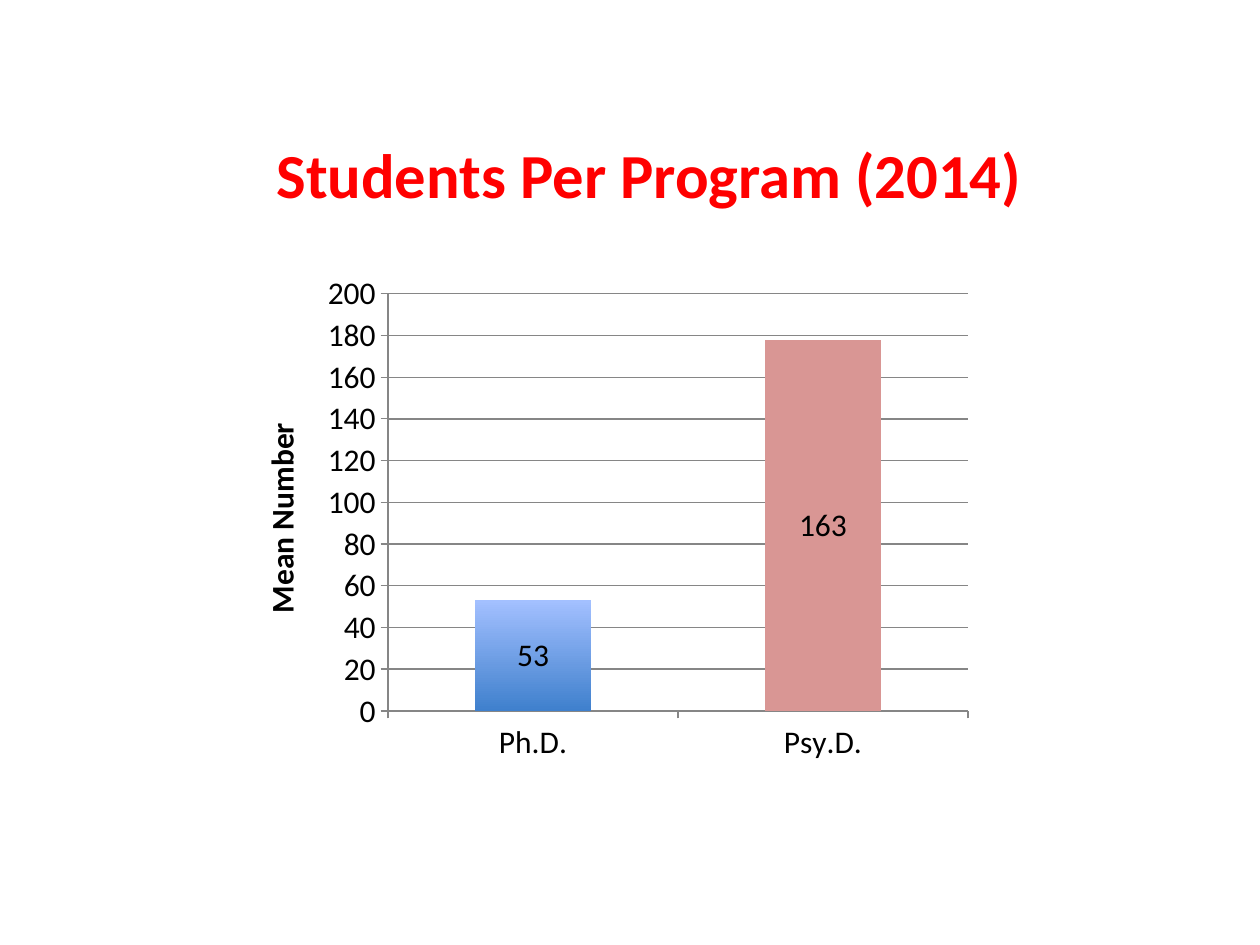
from pptx import Presentation
from pptx.chart.data import CategoryChartData as ChartData
from pptx.dml.color import RGBColor
from pptx.enum.chart import XL_CHART_TYPE as ChartType
from pptx.enum.chart import XL_LABEL_POSITION as LabelPosition
from pptx.enum.chart import XL_TICK_MARK as TickMark
from pptx.enum.text import MSO_ANCHOR as Anchor
from pptx.enum.text import PP_ALIGN as Align
from pptx.oxml import parse_xml
from pptx.oxml.ns import nsdecls
from pptx.util import Inches, Pt

COLORS = {
    "title": "FF0000",
    "text": "000000",
    "line": "868686",
    "blue_top": "A3C0FF",
    "blue_bottom": "3F80CD",
    "pink": "D99694",
}
MEANS = {"Ph.D.": 53, "Psy.D.": 178}
LABELS = ["53", "163"]
PLOT_AREA = {"x": 0.198, "y": 0.158, "w": 0.69, "h": 0.687}


def rgb(name):
    return RGBColor.from_string(COLORS[name])


def format_font(font, size=18, color="text", bold=False):
    font.name = "Calibri"
    font.size = Pt(size)
    font.bold = bold
    font.color.rgb = rgb(color)


def write(frame, text, align=Align.CENTER, **style):
    para = frame.paragraphs[0]
    para.alignment = align
    span = para.add_run()
    span.text = text
    format_font(span.font, **style)


class SlideBuilder:
    def __init__(self, page):
        self.page = page

    def title(self, text, left, top, width, height, **style):
        box = self.page.shapes.title
        box.left, box.top = Inches(left), Inches(top)
        box.width, box.height = Inches(width), Inches(height)
        box.text_frame.word_wrap = True
        box.text_frame.vertical_anchor = Anchor.TOP
        write(box.text_frame, text, **style)

    def column_chart(self, values, labels, left, top, width, height):
        data = ChartData()
        data.categories = list(values)
        data.add_series("Series 1", list(values.values()))
        chart = self.page.shapes.add_chart(
            ChartType.COLUMN_STACKED, Inches(left), Inches(top),
            Inches(width), Inches(height), data).chart
        chart.has_legend = False
        chart.has_title = False
        format_font(chart.font)
        self.axes(chart)
        self.columns(chart.plots[0], labels)
        self.plot_layout(chart)

    def axes(self, chart):
        for axis in (chart.category_axis, chart.value_axis):
            axis.major_tick_mark = TickMark.OUTSIDE
            axis.minor_tick_mark = TickMark.NONE
            axis.format.line.color.rgb = rgb("line")
            format_font(axis.tick_labels.font)
        scale = chart.value_axis
        scale.minimum_scale, scale.maximum_scale = 0, 200
        scale.major_unit = 20
        scale.has_major_gridlines = True
        scale.major_gridlines.format.line.color.rgb = rgb("line")
        write(scale.axis_title.text_frame, "Mean Number", bold=True)

    def columns(self, plot, labels):
        plot.gap_width = 150
        plot.overlap = 100
        plot.vary_by_categories = False
        series = plot.series[0]

        # Blue gradient for the series, plain pink for the second column
        fill = series.format.fill
        fill.gradient()
        fill.gradient_angle = 270
        for stop, color, position in zip(
                fill.gradient_stops, ("blue_top", "blue_bottom"), (0, 1)):
            stop.color.rgb = rgb(color)
            stop.position = position
        pink = series.points[1].format.fill
        pink.solid()
        pink.fore_color.rgb = rgb("pink")

        # Labels in the middle of the columns
        for index, text in enumerate(labels):
            label = series.points[index].data_label
            write(label.text_frame, text)
            label.position = LabelPosition.CENTER

    def plot_layout(self, chart):
        area = chart.plots[0]._element.getparent()
        for old in area.findall("{*}layout"):
            area.remove(old)
        sizes = "".join(f'<c:{key} val="{value}"/>' for key, value in PLOT_AREA.items())
        area.insert(0, parse_xml(
            f'<c:layout {nsdecls("c")}><c:manualLayout>'
            '<c:layoutTarget val="inner"/><c:xMode val="edge"/><c:yMode val="edge"/>'
            f'{sizes}</c:manualLayout></c:layout>'))


def main():
    deck = Presentation()
    deck.slide_width, deck.slide_height = Inches(10), Inches(7.5)
    builder = SlideBuilder(deck.slides.add_slide(deck.slide_layouts[5]))

    # Heading
    builder.title("Students Per Program (2014)", 1.37, 1.03, 7.56, 0.88,
                  size=35.8, color="title", bold=True)

    # Mean number of students
    builder.column_chart(MEANS, LABELS, 1.76, 1.57, 6.67, 4.82)

    deck.save("out.pptx")


if __name__ == "__main__":
    main()
